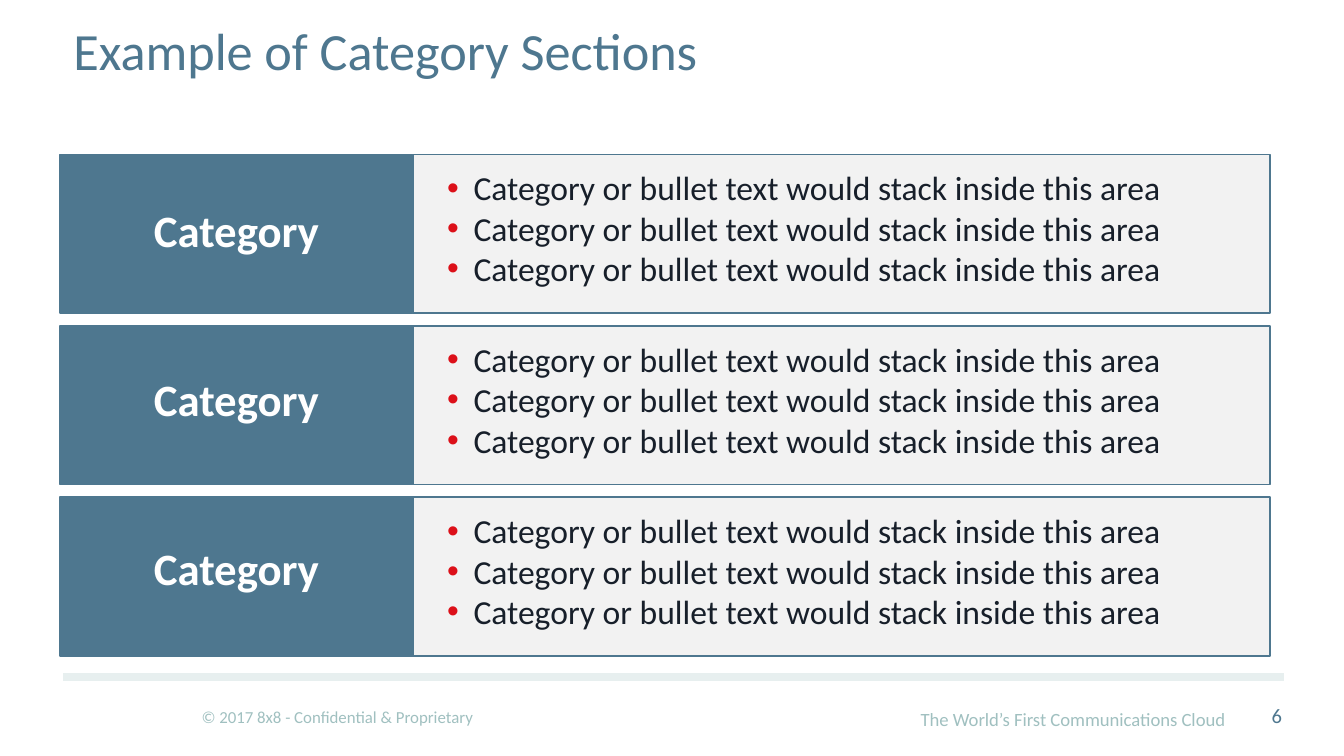
import pptx
import pptx.dml.color
import pptx.enum.shapes
import pptx.enum.text
import pptx.oxml
import pptx.oxml.ns
import pptx.util

Cm = pptx.util.Cm
Pt = pptx.util.Pt
ALIGN = pptx.enum.text.PP_ALIGN
ANCHOR = pptx.enum.text.MSO_ANCHOR

# Content
TITLE = "Example of Category Sections"
BULLET = "Category or bullet text would stack inside this area"
SECTIONS = [("Category", [BULLET] * 3)] * 3
COPYRIGHT = "© 2017 8x8 - Confidential & Proprietary"
SLOGAN = "The World’s First Communications Cloud"
PAGE_NUMBER = "6"

# Colours and text formats
BLUE, PALE, RULE, BULLET_RED = "4E778F", "F2F2F2", "E7EFEF", "DC1019"
TITLE_FORMAT = {"size": Pt(28), "color": BLUE}
LABEL_FORMAT = {"size": Pt(24), "color": "FFFFFF", "bold": True}
BODY_FORMAT = {"size": Pt(18), "color": "171F2A"}
COPYRIGHT_FORMAT = {"size": Pt(9), "color": "A0C0C0"}
SLOGAN_FORMAT = {"size": Pt(10), "color": "A0C0C0"}
NUMBER_FORMAT = {"size": Pt(11), "color": BLUE}

# Section grid, in centimetres
LEFT, TOP, HEIGHT, PITCH = 1.14, 2.92, 3.0, 3.24
LABEL_WIDTH, BODY_WIDTH = 6.66, 16.2
LABEL_TOP, LABEL_PITCH = 3.71, 3.19


def colour(value):
    return pptx.dml.color.RGBColor.from_string(value)


def add_bullet(para):
    properties = para._p.get_or_add_pPr()
    properties.set("marL", str(Cm(0.5)))
    properties.set("indent", str(-Cm(0.5)))
    namespace = pptx.oxml.ns.nsdecls("a")
    for xml in (
        f'<a:buClr {namespace}><a:srgbClr val="{BULLET_RED}"/></a:buClr>',
        f'<a:buFont {namespace} typeface="Arial"/>',
        f'<a:buChar {namespace} char="•"/>',
    ):
        properties.append(pptx.oxml.parse_xml(xml))


def add_text(page, place, lines, style, align=ALIGN.LEFT, anchor=ANCHOR.TOP,
             wrap=True, bullets=False):
    box = page.shapes.add_textbox(*map(Cm, place))
    frame = box.text_frame
    frame.word_wrap = wrap
    frame.vertical_anchor = anchor
    for index, line in enumerate(lines):
        para = frame.paragraphs[0] if index == 0 else frame.add_paragraph()
        para.alignment = align
        if bullets:
            add_bullet(para)
        span = para.add_run()
        span.text = line
        span.font.name = "Calibri"
        for name, value in style.items():
            if name == "color":
                span.font.color.rgb = colour(value)
            else:
                setattr(span.font, name, value)
    return box


def add_panel(page, place, fill):
    panel = page.shapes.add_shape(
        pptx.enum.shapes.MSO_SHAPE.RECTANGLE, *map(Cm, place))
    panel.shadow.inherit = False
    panel.fill.solid()
    panel.fill.fore_color.rgb = colour(fill)
    panel.line.color.rgb = colour(BLUE)
    panel.line.width = Pt(1)


def add_footer(page):
    rule = page.shapes.add_connector(
        pptx.enum.shapes.MSO_CONNECTOR.STRAIGHT,
        Cm(1.2), Cm(12.8), Cm(24.26), Cm(12.8))
    rule.line.color.rgb = colour(RULE)
    rule.line.width = Pt(4.5)
    rule._element.spPr.append(pptx.oxml.parse_xml(
        f'<a:effectLst {pptx.oxml.ns.nsdecls("a")}/>'))
    add_text(page, (3.56, 13.23, 5.69, 0.64), [COPYRIGHT], COPYRIGHT_FORMAT,
             wrap=False)
    add_text(page, (17.15, 13.26, 6.4, 0.69), [SLOGAN], SLOGAN_FORMAT,
             wrap=False)
    number = add_text(page, (23.52, 13.28, 0.89, 0.58), [PAGE_NUMBER],
                      NUMBER_FORMAT, ALIGN.RIGHT, ANCHOR.BOTTOM)
    frame = number.text_frame
    frame.margin_left = frame.margin_right = Cm(0.18)
    frame.margin_top = frame.margin_bottom = Cm(0.1)


def main():
    deck = pptx.Presentation()
    deck.slide_width, deck.slide_height = Cm(25.4), Cm(14.29)
    page = deck.slides.add_slide(deck.slide_layouts[6])

    # Footer and title
    add_footer(page)
    add_text(page, (LEFT, 0, 22.86, 1.88), [TITLE], TITLE_FORMAT,
             anchor=ANCHOR.MIDDLE)

    # Category sections
    for row, (label, bullets) in enumerate(SECTIONS):
        top = TOP + row * PITCH
        body_left = LEFT + LABEL_WIDTH
        add_panel(page, (LEFT, top, LABEL_WIDTH, HEIGHT), BLUE)
        add_panel(page, (body_left, top, BODY_WIDTH, HEIGHT), PALE)
        add_text(page, (LEFT, LABEL_TOP + row * LABEL_PITCH, LABEL_WIDTH, 1.27),
                 [label], LABEL_FORMAT, ALIGN.CENTER)
        add_text(page, (body_left + 0.4, top + 0.12, 15.24, 2.57), bullets,
                 BODY_FORMAT, bullets=True)

    deck.save("out.pptx")


if __name__ == "__main__":
    main()
